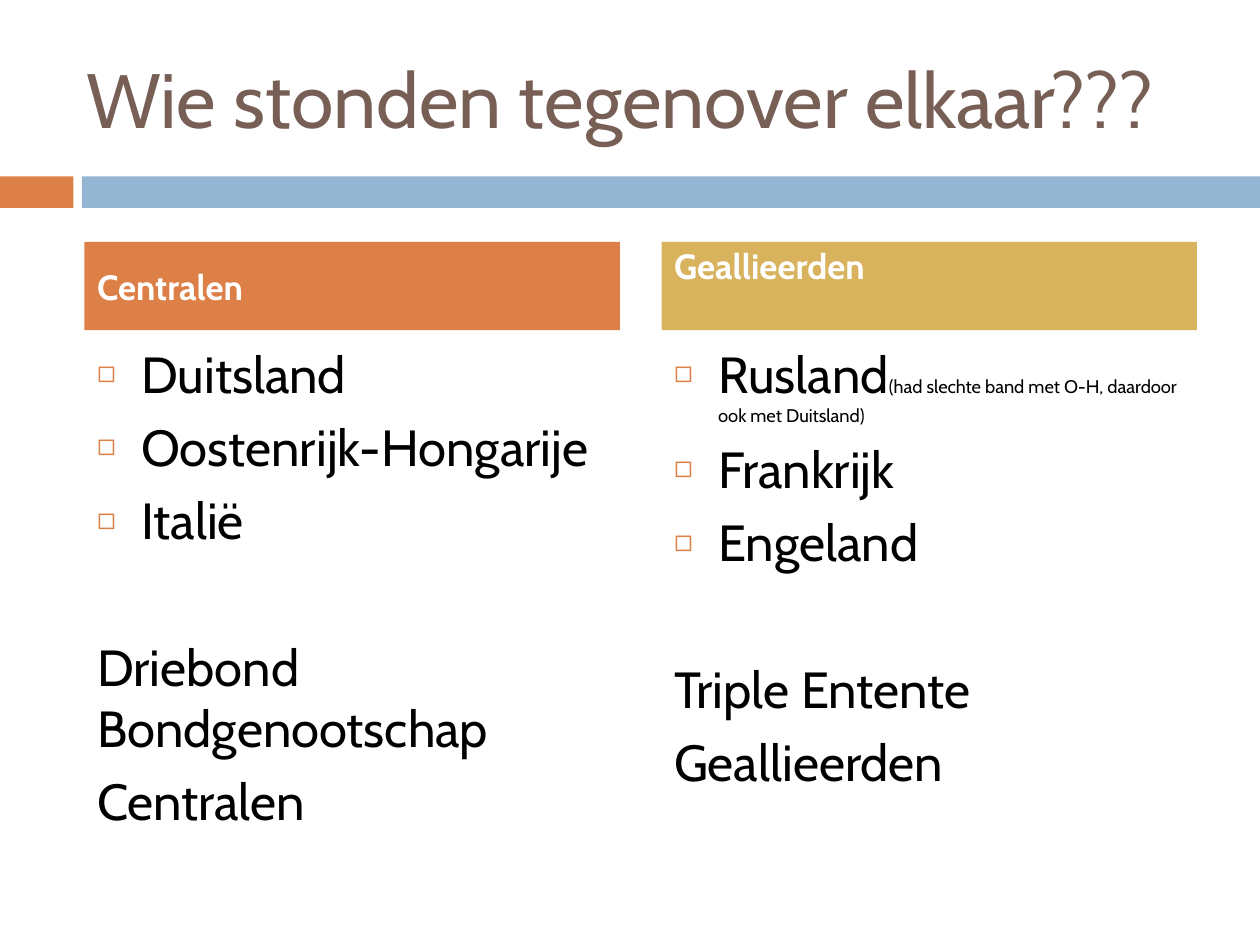
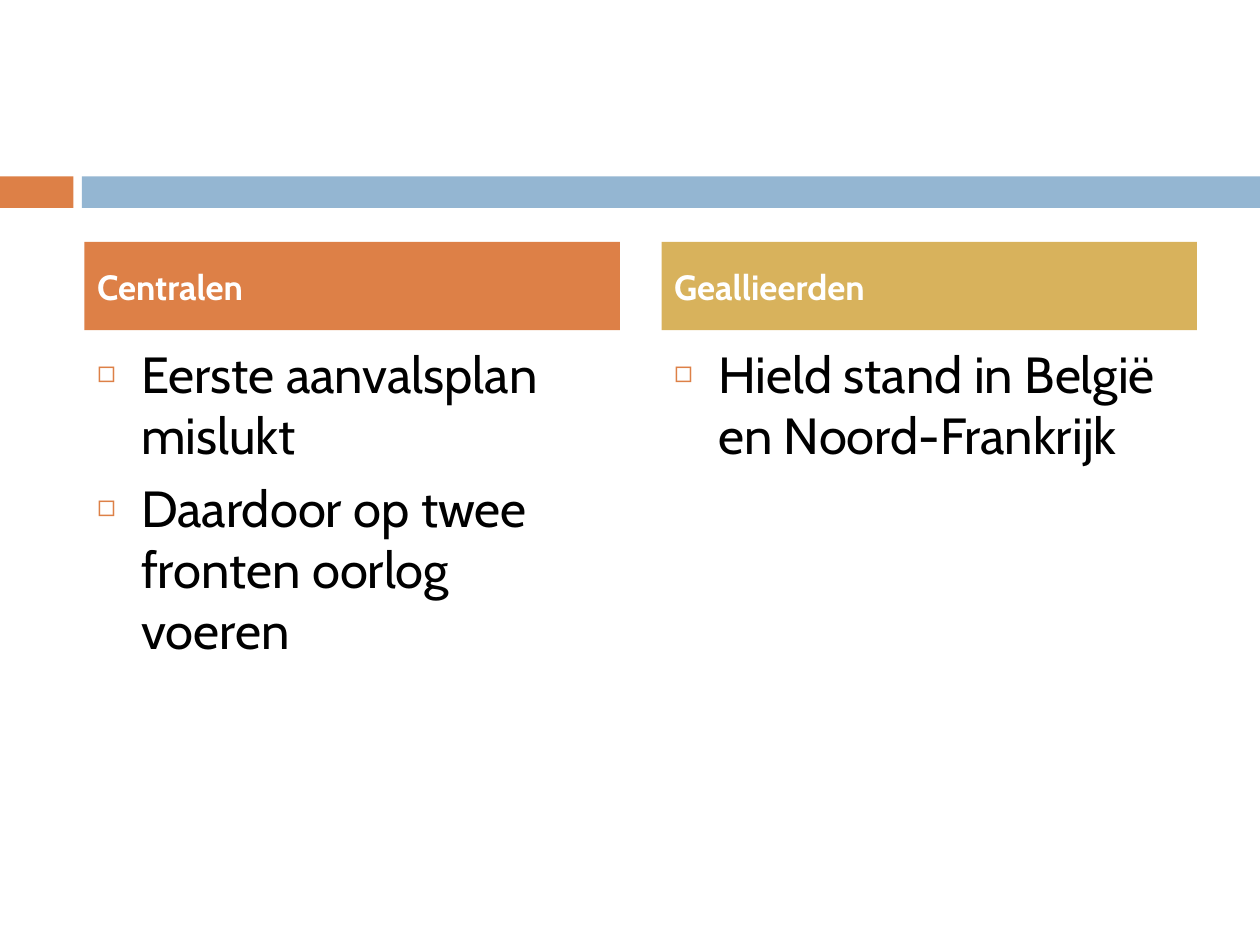
from lxml import etree
from pptx import Presentation
from pptx.dml.color import RGBColor
from pptx.enum import shapes, text
from pptx.oxml import ns
from pptx.util import Pt

ORANGE = RGBColor(0xDD, 0x80, 0x47)
BLUE = RGBColor(0x94, 0xB6, 0xD2)
GOLD = RGBColor(0xD8, 0xB2, 0x5C)
BROWN = RGBColor(0x77, 0x5F, 0x55)
BLACK = RGBColor(0, 0, 0)
WHITE = RGBColor(255, 255, 255)
FONT = "Cabin"
WIDE, HIGH = 720, 540

# Columns: left edge, header fill, header placeholder, list placeholder
COLS = ((48.24, ORANGE, 1, 2), (378, GOLD, 3, 4))
COL_W = 306
INDENT = 25.2
GAP = 7         # space before each paragraph
BREAK = 48.8    # space before the closing lines
SMALL = 10.5


def place(shape, left, top, width, height):
    shape.left, shape.top = Pt(left), Pt(top)
    shape.width, shape.height = Pt(width), Pt(height)


def style(para, size, color, bold=False):
    font = para.font
    font.name, font.size, font.bold = FONT, Pt(size), bold
    font.color.rgb = color
    para.alignment = text.PP_ALIGN.LEFT


def bullet(para, mark=None):
    """Give the paragraph a hanging bullet, or none at all."""
    props = para._p.get_or_add_pPr()
    indent = Pt(INDENT) if mark else 0
    props.set("marL", str(indent))
    props.set("indent", str(-indent))

    def add(parent, tag, **attrs):
        return etree.SubElement(parent, ns.qn(tag), attrs)

    if mark:
        add(add(props, "a:buClr"), "a:srgbClr", val=str(ORANGE))
        add(props, "a:buSzPct", val="60000")
        add(props, "a:buChar", char=mark)
    else:
        add(props, "a:buNone")


def bands(slide):
    for left, width, color in ((0, 42, ORANGE), (46.8, WIDE - 46.8, BLUE)):
        band = slide.shapes.add_shape(
            shapes.MSO_SHAPE.RECTANGLE, Pt(left), Pt(100.8), Pt(width), Pt(18))
        band.shadow.inherit = False
        band.fill.solid()
        band.fill.fore_color.rgb = color
        band.line.fill.background()


def title(slide, words):
    box = slide.shapes.title
    if not words:
        box.element.getparent().remove(box.element)
        return
    place(box, 42, 21.6, 642, 68.4)
    frame = box.text_frame
    frame.text = words
    frame.auto_size = text.MSO_AUTO_SIZE.NONE
    frame.vertical_anchor = text.MSO_ANCHOR.MIDDLE
    style(frame.paragraphs[0], 44, BROWN)


def header(box, left, fill, words, raised):
    place(box, left, 138.24, COL_W, 50.4)
    box.fill.solid()
    box.fill.fore_color.rgb = fill
    frame = box.text_frame
    frame.text = words
    frame.auto_size = text.MSO_AUTO_SIZE.NONE
    frame.vertical_anchor = text.MSO_ANCHOR.MIDDLE
    if raised:
        frame.vertical_anchor = text.MSO_ANCHOR.TOP
        frame.margin_top = Pt(1.2)
    para = frame.paragraphs[0]
    para.space_before = Pt(GAP)
    bullet(para)
    style(para, 20, WHITE, True)


def listing(box, left, items, closing):
    """Bulleted items, then plain closing lines; an item may carry a note."""
    place(box, left, 192.24, COL_W, 282.24)
    frame = box.text_frame
    frame.auto_size = text.MSO_AUTO_SIZE.NONE
    for i, item in enumerate(items + closing):
        para = frame.paragraphs[0] if i == 0 else frame.add_paragraph()
        words, note = item if isinstance(item, tuple) else (item, None)
        para.add_run().text = words
        if note:
            run = para.add_run()
            run.text = note
            run.font.size = Pt(SMALL)
        para.space_before = Pt(BREAK if i == len(items) else GAP)
        bullet(para, "◻" if i < len(items) else None)
        style(para, 29, BLACK)


def compare(deck, heading, sides, raised=False):
    """One slide with the two camps side by side."""
    slide = deck.slides.add_slide(deck.slide_layouts[4])
    holders = {p.placeholder_format.idx: p for p in slide.placeholders}
    bands(slide)
    title(slide, heading)
    for (left, fill, head, body), (name, items, closing) in zip(COLS, sides):
        listing(holders[body], left, items, closing)
        header(holders[head], left, fill, name, raised and fill == GOLD)


def main():
    deck = Presentation()
    deck.slide_width, deck.slide_height = Pt(WIDE), Pt(HIGH)

    # Who fought whom
    compare(deck, "Wie stonden tegenover elkaar???", (
        ("Centralen", ["Duitsland", "Oostenrijk-Hongarije", "Italië"],
         ["Driebond Bondgenootschap", "Centralen"]),
        ("Geallieerden",
         [("Rusland", "(had slechte band met O-H, daardoor ook met Duitsland)"),
          "Frankrijk", "Engeland"],
         ["Triple Entente", "Geallieerden"]),
    ), raised=True)

    # How the war began
    compare(deck, None, (
        ("Centralen", ["Eerste aanvalsplan mislukt",
                       "Daardoor op twee fronten oorlog voeren"], []),
        ("Geallieerden", ["Hield stand in België en Noord-Frankrijk"], []),
    ))
    deck.save("out.pptx")


if __name__ == "__main__":
    main()
